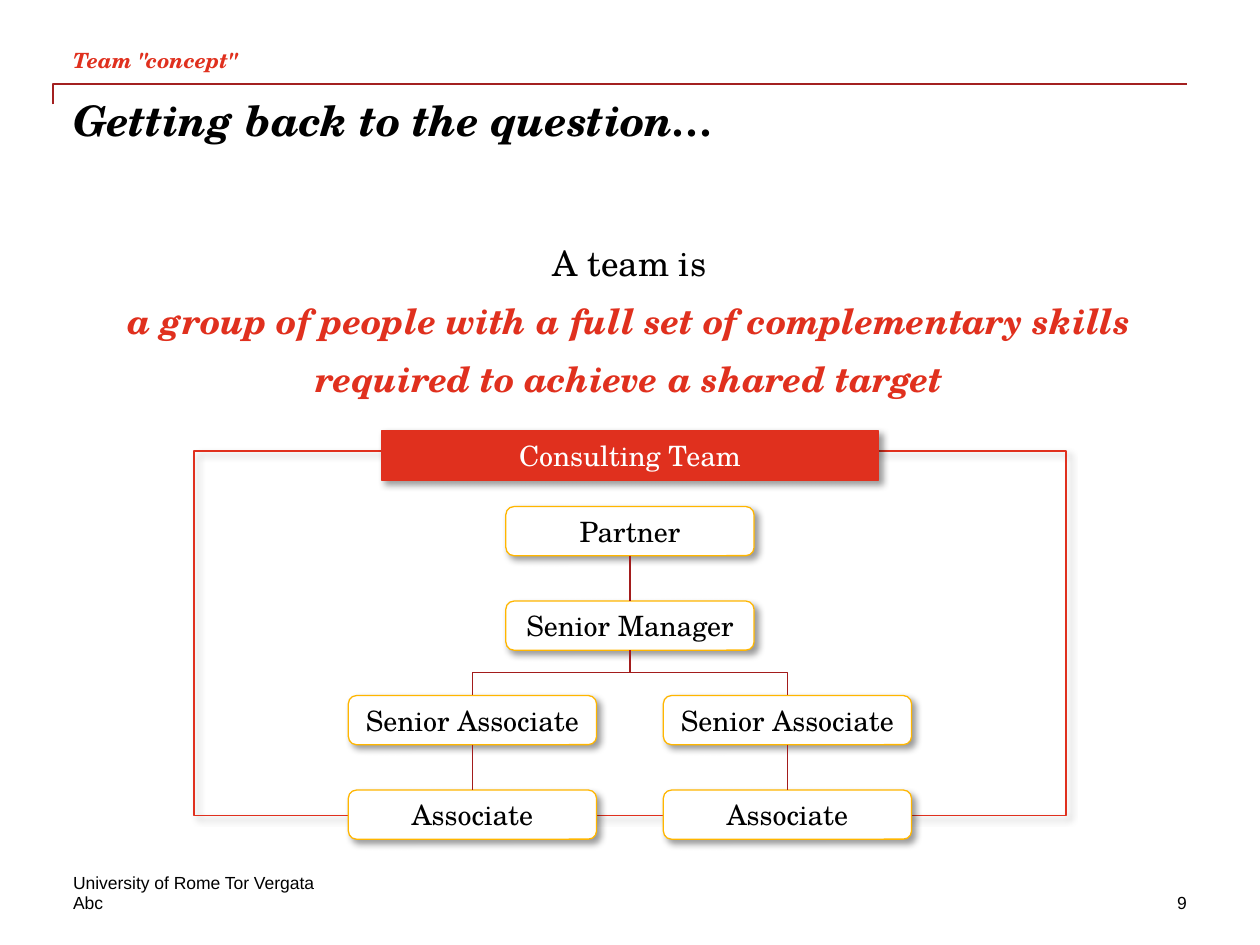
from lxml.etree import SubElement
from pptx import Presentation
from pptx.dml.color import RGBColor
from pptx.enum.shapes import MSO_CONNECTOR, MSO_SHAPE
from pptx.enum.text import MSO_ANCHOR, MSO_AUTO_SIZE, PP_ALIGN
from pptx.oxml.ns import qn
from pptx.util import Inches, Pt

SERIF, SANS = "TeX Gyre Schola", "Arial"
RED, DARK_RED, AMBER = "E0301E", "A31C1C", "FFB600"
BLACK, WHITE = "000000", "FFFFFF"


def color(value):
    return RGBColor.from_string(value)


class TeamPage:
    """Holds the text style and the page being drawn."""

    margin = 0.58
    style = {"name": SERIF, "size": Pt(16), "bold": False, "italic": False}

    def __init__(self, deck):
        self.page = deck.slides.add_slide(deck.slide_layouts[5])
        self.shapes = self.page.shapes

    def fill_text(self, box, lines, anchor=MSO_ANCHOR.TOP, align=PP_ALIGN.LEFT, after=0):
        """Fill a box with lines given as (text, colour, font changes)."""
        frame = box.text_frame
        layout = {"word_wrap": True, "auto_size": MSO_AUTO_SIZE.NONE,
                  "vertical_anchor": anchor, "margin_left": 0,
                  "margin_right": 0, "margin_top": 0, "margin_bottom": 0}
        for key, value in layout.items():
            setattr(frame, key, value)
        for index, (text, text_color, changes) in enumerate(lines):
            para = frame.paragraphs[0] if index == 0 else frame.add_paragraph()
            para.alignment = align
            para.space_before, para.space_after = Pt(0), Pt(after)
            para.line_spacing = 1.0
            span = para.add_run()
            span.text = text
            for key, value in {**self.style, **changes}.items():
                setattr(span.font, key, value)
            span.font.color.rgb = color(text_color)

    def title(self, text, area):
        box = self.shapes.title
        box.left, box.top, box.width, box.height = map(Inches, area)
        changes = {"size": Pt(24), "bold": True, "italic": True}
        self.fill_text(box, [(text, BLACK, changes)])

    def text(self, area, lines, **options):
        box = self.shapes.add_textbox(*map(Inches, area))
        self.fill_text(box, lines, **options)

    def panel(self, area, outline, fill=None, rounded=False):
        """Add an outlined box with a soft shadow."""
        preset = MSO_SHAPE.ROUNDED_RECTANGLE
        box = self.shapes.add_shape(preset, *map(Inches, area))
        if not rounded:
            box.adjustments[0] = 0
        if fill:
            box.fill.solid()
            box.fill.fore_color.rgb = color(fill)
        else:
            box.fill.background()
        box.line.color.rgb = color(outline)
        box.line.width = Pt(0.75)
        box.shadow.inherit = False
        effects = box._element.spPr.find(qn("a:effectLst"))
        shadow = SubElement(effects, qn("a:outerShdw"), blurRad=str(Pt(4)),
                            dist=str(Pt(3)), dir="2700000", algn="tl", rotWithShape="0")
        tint = SubElement(shadow, qn("a:srgbClr"), val=BLACK)
        SubElement(tint, qn("a:alpha"), val="40000")
        return box

    def label(self, area, text, outline, fill, text_color, rounded=True):
        box = self.panel(area, outline, fill, rounded)
        self.fill_text(box, [(text, text_color, {})], MSO_ANCHOR.MIDDLE, PP_ALIGN.CENTER)

    def line(self, start, end, kind=MSO_CONNECTOR.STRAIGHT, stroke=DARK_RED, width=0.75):
        link = self.shapes.add_connector(kind, *map(Inches, (*start, *end)))
        link.line.color.rgb = color(stroke)
        link.line.width = Pt(width)
        SubElement(link._element.spPr, qn("a:effectLst"))
        return link

    def elbow(self, start, end, turn, flips=(), preset="bentConnector3", **stroke):
        """Add an elbow that leaves its start vertically, by a quarter turn."""
        (x1, y1), (x2, y2) = start, end
        across, down = abs(x2 - x1), abs(y2 - y1)
        left, top = (x1 + x2 - down) / 2, (y1 + y2 - across) / 2
        link = self.line((left, top), (left + down, top + across),
                         MSO_CONNECTOR.ELBOW, **stroke)
        properties = link._element.spPr
        frame = properties.find(qn("a:xfrm"))
        frame.set("rot", str(turn * 60000))
        for flip in flips:
            frame.set(flip, "1")
        properties.find(qn("a:prstGeom")).set("prst", preset)


def draw_header(page):
    page.elbow((0.42, 0.83), (9.42, 0.67), 90, ("flipH", "flipV"),
               "bentConnector2", stroke="A32020", width=1)
    page.title("Getting back to the question…", (page.margin, 0.75, 8.83, 1))
    accent = {"bold": True, "italic": True}
    page.text((page.margin, 0.33, 8.83, 0.25),
              [('Team "concept"', RED, {**accent, "size": Pt(12)})],
              anchor=MSO_ANCHOR.BOTTOM)
    large = {"size": Pt(20)}
    page.text((page.margin, 1.92, 8.83, 1.5), [
        ("A team is", BLACK, large),
        ("a group of people with a full set of complementary skills", RED,
         {**accent, **large}),
        ("required to achieve a shared target", RED, {**accent, **large}),
    ], align=PP_ALIGN.CENTER, after=9)


def draw_team(page):
    width, height, top, step = 1.97, 0.39, 4.02, 0.75
    center, left, right = 5, 3.75, 6.25
    page.panel((1.54, 3.58, 6.92, 2.89), RED)
    page.label((3.03, 3.42, 3.94, height), "Consulting Team", RED, RED, WHITE, False)

    levels = [("Partner", [center]), ("Senior Manager", [center]),
              ("Senior Associate", [left, right]), ("Associate", [left, right])]
    for level, (role, columns) in enumerate(levels):
        for x in columns:
            area = (x - width / 2, top + level * step, width, height)
            page.label(area, role, AMBER, WHITE, BLACK)

    def gap(level):
        """Give the bottom of a level and the top of the next one."""
        return top + level * step + height, top + (level + 1) * step

    for x, level in [(center, 0), (left, 2), (right, 2)]:
        upper, lower = gap(level)
        page.line((x, upper), (x, lower))
    upper, lower = gap(1)
    for x, turn, flips in [(left, 90, ()), (right, 270, ("flipH",))]:
        page.elbow((center, upper), (x, lower), turn, flips)


def draw_footer(page):
    small = {"name": SANS, "size": Pt(10)}
    page.text((page.margin, 6.92, 5.75, 0.17),
              [("University of Rome Tor Vergata", BLACK, small)], anchor=MSO_ANCHOR.BOTTOM)
    page.text((page.margin, 7.08, 2.83, 0.17), [("Abc", BLACK, small)])
    page.text((7.75, 7.08, 1.67, 0.17), [("9", BLACK, small)], align=PP_ALIGN.RIGHT)


def main():
    deck = Presentation()
    deck.slide_width, deck.slide_height = Inches(10), Inches(7.5)
    page = TeamPage(deck)
    draw_header(page)
    draw_team(page)
    draw_footer(page)
    deck.save("out.pptx")


if __name__ == "__main__":
    main()
